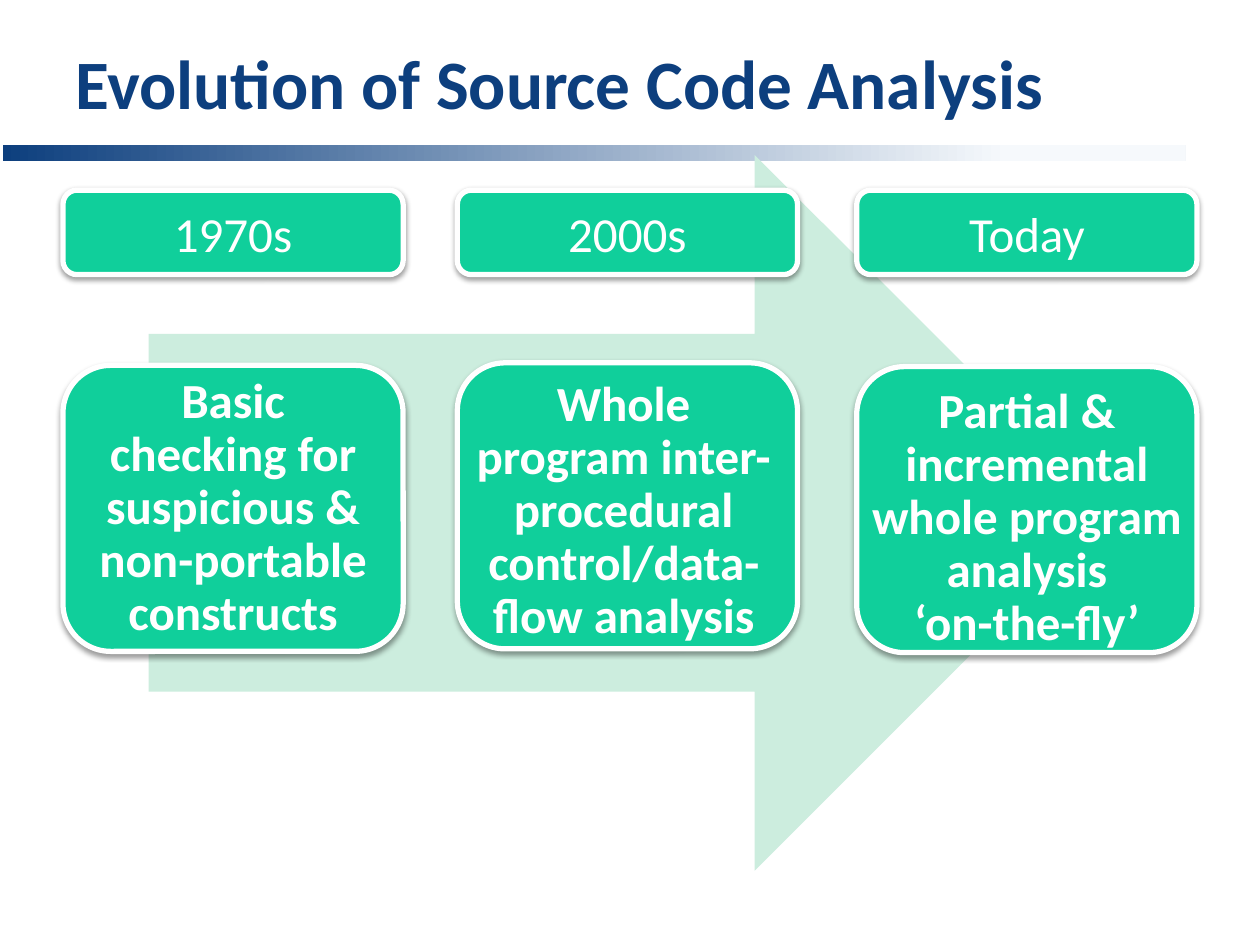
from dataclasses import dataclass

from lxml import etree
from pptx import Presentation
from pptx.dml.color import RGBColor
from pptx.enum.shapes import MSO_SHAPE
from pptx.enum.text import MSO_ANCHOR, PP_ALIGN
from pptx.oxml.ns import qn
from pptx.util import Pt

RECTANGLE = MSO_SHAPE.RECTANGLE
ROUNDED = MSO_SHAPE.ROUNDED_RECTANGLE
RIGHT_ARROW = MSO_SHAPE.RIGHT_ARROW
MIDDLE = MSO_ANCHOR.MIDDLE
LEFT, CENTER = PP_ALIGN.LEFT, PP_ALIGN.CENTER

EMU_PER_PX = 9144  # 100 px to the inch


@dataclass(frozen=True)
class Theme:
    font: str = "Calibri"
    navy: str = "0D3F7E"
    pale_blue: str = "F6F9FC"
    mint: str = "CCEDDE"
    green: str = "10CF9B"
    white: str = "FFFFFF"
    title_size: float = 39.6
    card_size: int = 28
    outline: int = 3


THEME = Theme()

# Era, left edge, top of card, description, text insets (left, top, right, bottom)
ERAS = [
    ("1970s", 50, 290,
     "Basic checking for suspicious & non-portable constructs",
     (12, 12, 12, 12)),
    ("2000s", 363, 288,
     "Whole program inter-procedural control/data-flow analysis",
     (1, 9, 7, 0)),
    ("Today", 680, 291,
     "Partial & incremental whole program analysis\v‘on-the-fly’",
     (1, 14, 1, 0)),
]
CARD_WIDTH, CARD_HEIGHT = 270, 227
LABEL_TOP, LABEL_HEIGHT = 151, 67


def px(value):
    return value * EMU_PER_PX


def color(value):
    return RGBColor.from_string(value)


def add_flat_shape(page, kind, box, fill=None):
    shape = page.shapes.add_shape(kind, *map(px, box))
    shape.shadow.inherit = False
    shape.line.fill.background()
    if fill:
        shape.fill.solid()
        shape.fill.fore_color.rgb = color(fill)
    return shape


def add_drop_shadow(shape):
    effects = shape._element.spPr.find(qn("a:effectLst"))
    shadow = etree.SubElement(effects, qn("a:outerShdw"), blurRad=str(Pt(3.1)),
                              dist=str(Pt(1.6)), dir="5400000", rotWithShape="0")
    black = etree.SubElement(shadow, qn("a:srgbClr"), val="000000")
    etree.SubElement(black, qn("a:alpha"), val="38000")


def write_text(shape, text, size, ink, bold, align, insets, spacing=1.0):
    frame = shape.text_frame
    frame.word_wrap = True
    frame.vertical_anchor = MIDDLE
    (frame.margin_left, frame.margin_top,
     frame.margin_right, frame.margin_bottom) = map(px, insets)
    frame.text = text
    para = frame.paragraphs[0]
    para.alignment = align
    para.line_spacing = spacing
    for span in para.runs:
        span.font.name = THEME.font
        span.font.size = Pt(size)
        span.font.bold = bold
        span.font.color.rgb = color(ink)


def add_header(page, title_box, band_box):
    # Fading band
    band = add_flat_shape(page, RECTANGLE, band_box)
    band.fill.gradient()
    band.fill.gradient_angle = 0
    stops = band.fill.gradient_stops
    for stop, position, tint in zip(stops, (0, 0.85), (THEME.navy, THEME.pale_blue)):
        stop.position = position
        stop.color.rgb = color(tint)
    # Title
    title = page.shapes.add_textbox(*map(px, title_box))
    write_text(title, "Evolution of Source Code Analysis", THEME.title_size,
               THEME.navy, True, LEFT, (10, 5, 10, 5))


def add_card(page, box, text, bold, insets, spacing=1.0):
    card = add_flat_shape(page, ROUNDED, box, THEME.green)
    card.line.color.rgb = color(THEME.white)
    card.line.width = Pt(THEME.outline)
    add_drop_shadow(card)
    write_text(card, text, THEME.card_size, THEME.white, bold, CENTER,
               insets, spacing)


def add_timeline(page, arrow_box):
    add_flat_shape(page, RIGHT_ARROW, arrow_box, THEME.mint)
    for era, left, top, description, insets in ERAS:
        add_card(page, (left, top, CARD_WIDTH, CARD_HEIGHT), description,
                 True, insets, 0.9)
        add_card(page, (left, LABEL_TOP, CARD_WIDTH, LABEL_HEIGHT), era,
                 False, (10, 5, 10, 5))


def main():
    deck = Presentation()
    deck.slide_width, deck.slide_height = px(1000), px(750)
    page = deck.slides.add_slide(deck.slide_layouts[6])
    add_header(page, title_box=(50, 37, 812, 55), band_box=(2, 115, 939, 13))
    add_timeline(page, arrow_box=(118, 123, 765, 568))
    deck.save("out.pptx")


if __name__ == "__main__":
    main()
